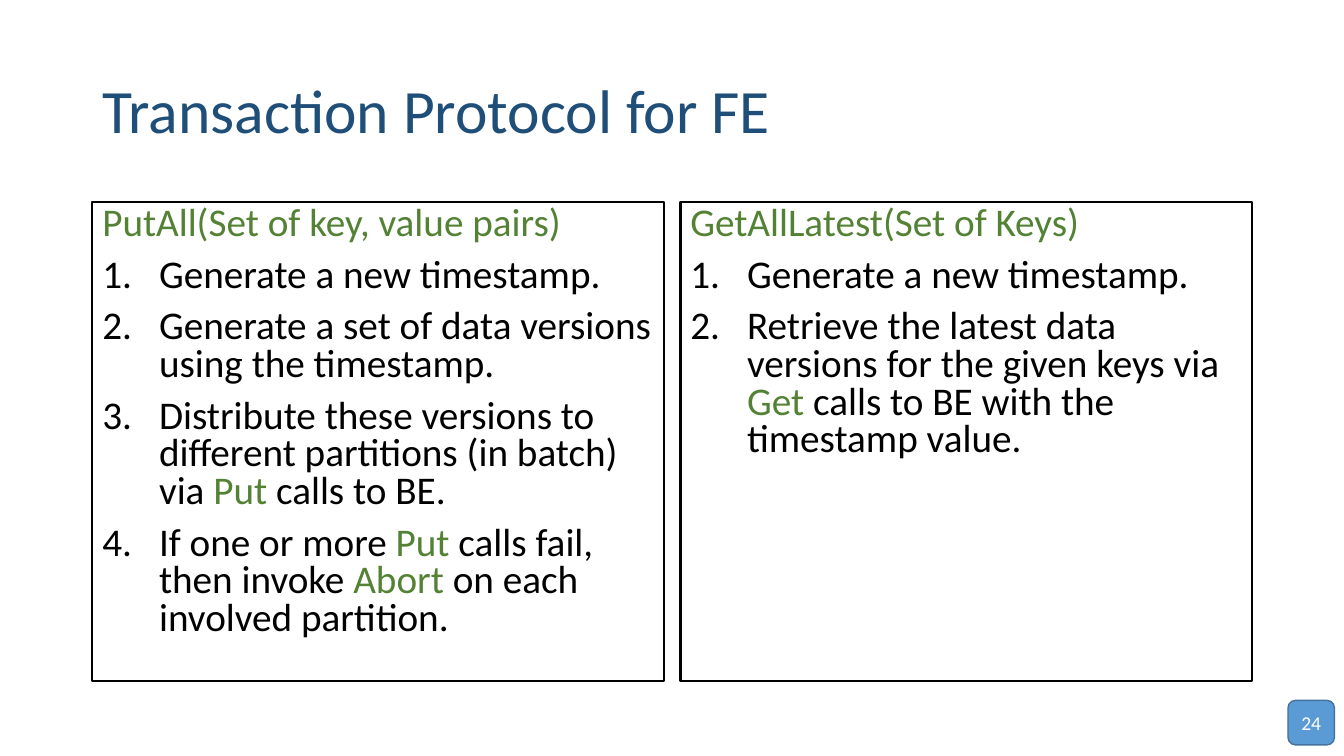
from pptx import Presentation
from pptx.dml.color import RGBColor
from pptx.enum.shapes import MSO_SHAPE
from pptx.enum.text import MSO_ANCHOR, PP_ALIGN
from pptx.util import Cm, Pt
from lxml import etree

RECT = MSO_SHAPE.RECTANGLE
ROUND = MSO_SHAPE.ROUNDED_RECTANGLE
TOP = MSO_ANCHOR.TOP
MIDDLE = MSO_ANCHOR.MIDDLE
LEFT = PP_ALIGN.LEFT
CENTER = PP_ALIGN.CENTER
DRAW = "{http://schemas.openxmlformats.org/drawingml/2006/main}"

BLUE, GREEN, BLACK, WHITE = "1F4E79", "548235", "000000", "FFFFFF"


def color(code):
    """Turn a hex string into a colour."""
    return RGBColor.from_string(code)


def write(para, text, size=28, ink=BLACK, accent=GREEN, align=LEFT,
          lines=None, before=0, number=False):
    """Fill a paragraph; parts between bars take the accent colour."""
    para.alignment = align
    para.line_spacing = lines
    para.space_before = Pt(before)
    if number:
        props = para._p.get_or_add_pPr()
        props.set("marL", str(Cm(1.43)))
        props.set("indent", str(-Cm(1.43)))
        etree.SubElement(props, DRAW + "buFont", typeface="+mj-lt")
        etree.SubElement(props, DRAW + "buAutoNum", type="arabicPeriod")
    for spot, part in enumerate(text.split("|")):
        if part:
            run = para.add_run()
            run.text = part
            run.font.name = "Calibri"
            run.font.size = Pt(size)
            run.font.color.rgb = color(accent if spot % 2 else ink)


class Deck:
    """Hold the style and the current slide."""

    def __init__(self):
        """Open a wide deck with one blank slide."""
        self.file = Presentation()
        self.file.slide_width = Cm(33.87)
        self.file.slide_height = Cm(19.05)
        self.slide = self.file.slides.add_slide(self.file.slide_layouts[6])

    def title(self, text, *box):
        """Add the slide title."""
        frame = self.slide.shapes.add_textbox(*map(Cm, box)).text_frame
        frame.word_wrap = True
        frame.vertical_anchor = MIDDLE
        write(frame.paragraphs[0], text, size=44, ink=BLUE, lines=0.9)

    def shape(self, kind, box, line, width, fill=None, anchor=TOP):
        """Add an outlined shape and return its text frame."""
        item = self.slide.shapes.add_shape(kind, *map(Cm, box))
        item.shadow.inherit = False
        item.line.color.rgb = color(line)
        item.line.width = Pt(width)
        if fill:
            item.fill.solid()
            item.fill.fore_color.rgb = color(fill)
        else:
            item.fill.background()
        frame = item.text_frame
        frame.word_wrap = True
        frame.vertical_anchor = anchor
        return frame

    def panel(self, head, steps, *box):
        """Add a framed heading with numbered steps."""
        frame = self.shape(RECT, box, BLACK, 1.5)
        write(frame.paragraphs[0], head, ink=GREEN, lines=0.8, before=10)
        for step in steps:
            write(frame.add_paragraph(), step, lines=0.8, before=10,
                  number=True)

    def badge(self, text, *box):
        """Add the page number badge."""
        frame = self.shape(ROUND, box, "43739E", 1, "5B9BD5", MIDDLE)
        frame.margin_left = frame.margin_right = 0
        write(frame.paragraphs[0], text, size=14, ink=WHITE, align=CENTER)


PANELS = [
    ("PutAll(Set of key, value pairs)", [
        "Generate a new timestamp.",
        "Generate a set of data versions using the timestamp.",
        "Distribute these versions to different partitions (in batch) "
        "via |Put| calls to BE.",
        "If one or more |Put| calls fail, then invoke |Abort| on each "
        "involved partition."]),
    ("GetAllLatest(Set of Keys)", [
        "Generate a new timestamp.",
        "Retrieve the latest data versions for the given keys via |Get| "
        "calls to BE with the timestamp value."]),
]


def main():
    """Build and save the slide."""
    deck = Deck()
    deck.title("Transaction Protocol for FE", 2.33, 1.01, 29.21, 3.68)
    for col, (head, steps) in enumerate(PANELS):
        deck.panel(head, steps, 2.33 + col * 14.82, 5.08, 14.4, 12.09)
    deck.badge("24", 32.46, 17.65, 1.17, 1.12)
    deck.file.save("out.pptx")


if __name__ == "__main__":
    main()
